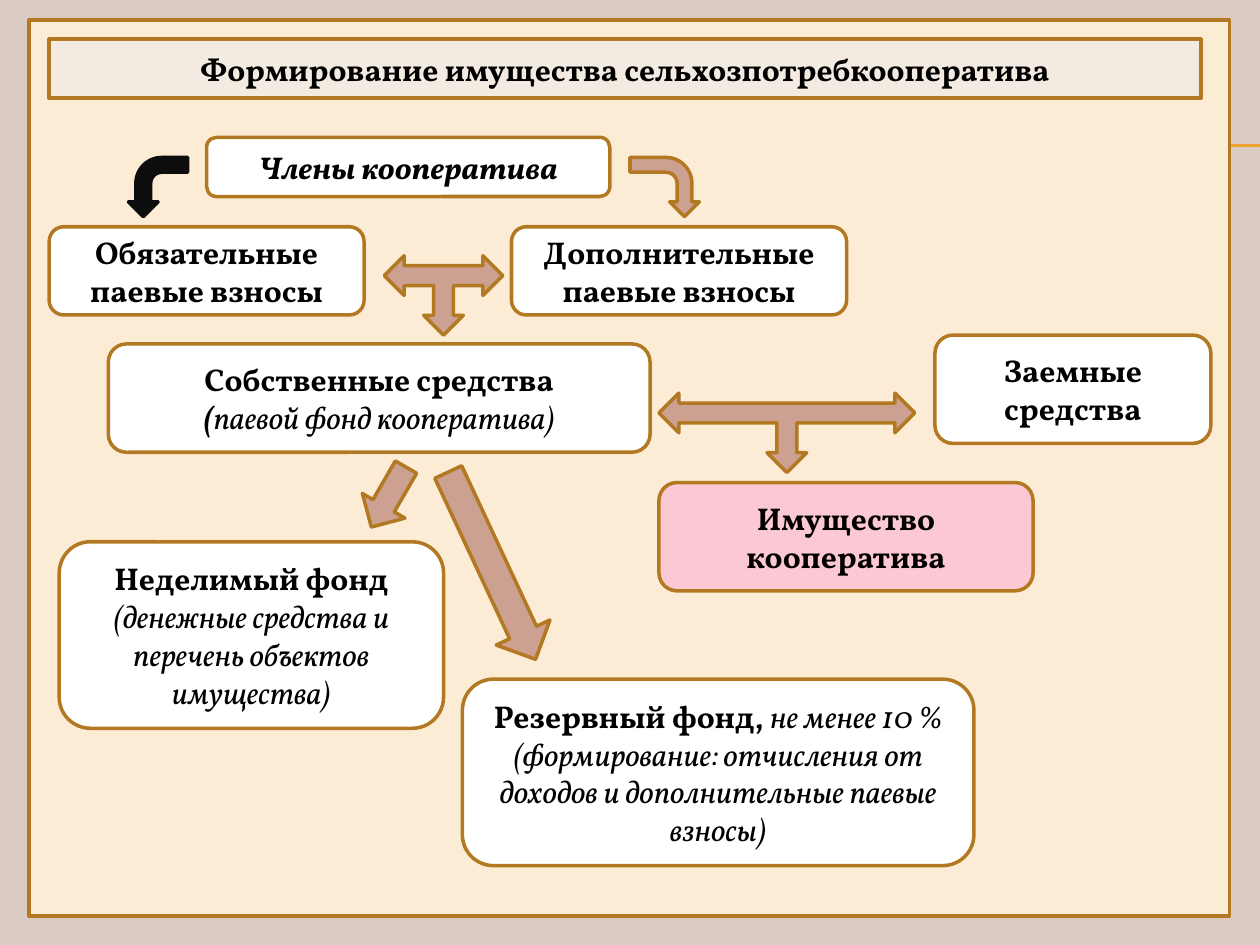
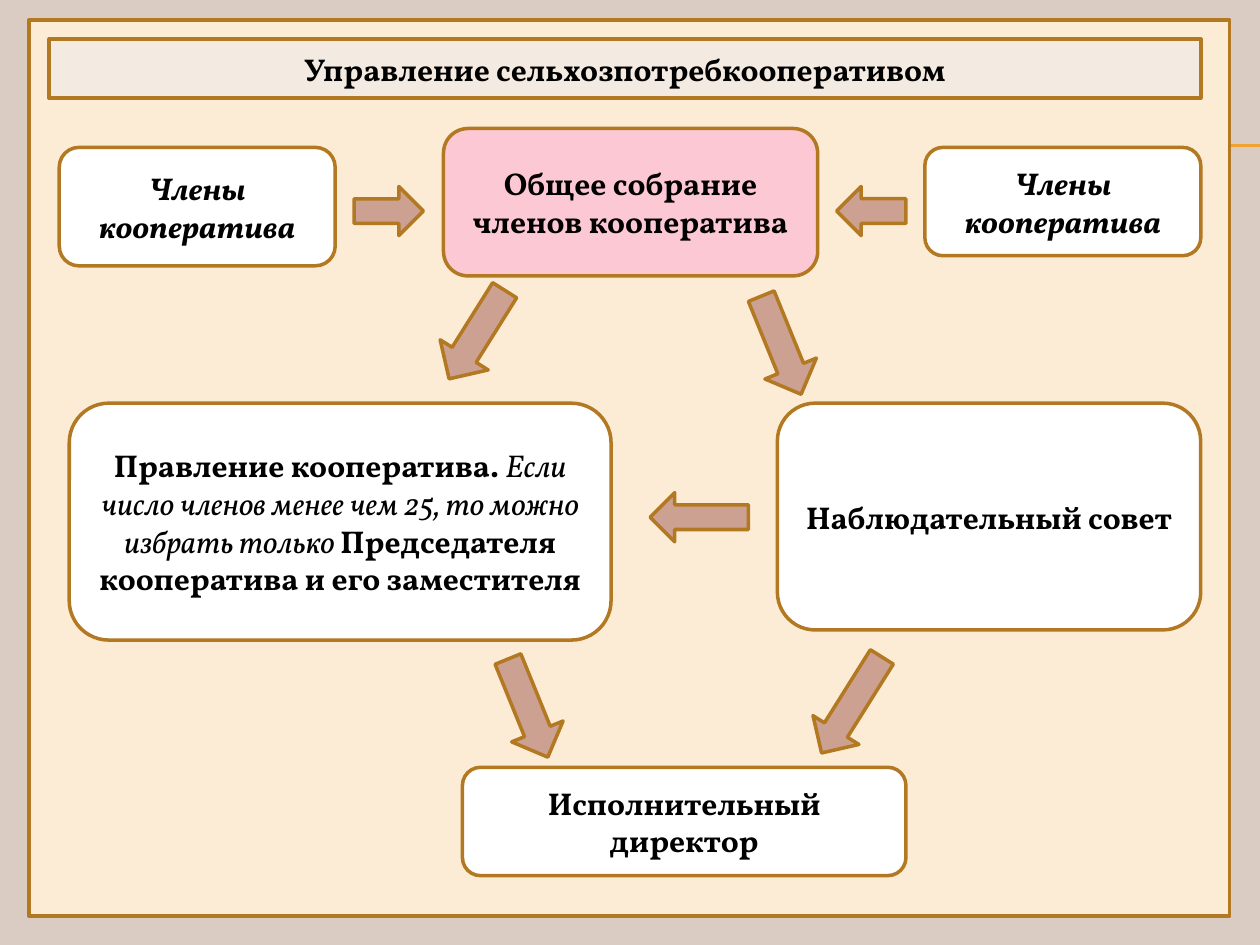
from pptx import Presentation
from pptx.dml.color import RGBColor
from pptx.enum import shapes, text
from pptx.oxml import parse_xml
from pptx.oxml.ns import nsdecls
from pptx.oxml.xmlchemy import OxmlElement
from pptx.util import Inches, Pt

SHAPE = shapes.MSO_SHAPE
FONT = "Vollkorn"
FONT_SIZE = 18
INK = "000000"
BACKDROP = "DACBC3"
PANEL = "FCECD5"
TITLE_FILL = "F3EAE2"
BORDER = "B27822"
RULE = "F0A22E"
WHITE = "FFFFFF"
PINK = "FCC8D4"
ARROW = "CCA192"
DARK = "0D0D0D"


def rgb(value):
    return RGBColor.from_string(value)


class Deck:
    """Shared style plus the slide being built."""

    def __init__(self, prs):
        self.prs = prs
        self.slide = None
        fill = prs.slide_master.background.fill
        fill.solid()
        fill.fore_color.rgb = rgb(BACKDROP)

    def new_slide(self, title):
        self.slide = self.prs.slides.add_slide(self.prs.slide_layouts[5])
        for y in (1.15, 1.16):
            self.rule(0.56, y, 10, y)
        self.shape(SHAPE.RECTANGLE, 0.23, 0.16, 9.53, 7.11, PANEL)
        self.title(title)

    def rule(self, x1, y1, x2, y2):
        line = self.slide.shapes.add_connector(
            shapes.MSO_CONNECTOR.STRAIGHT,
            Inches(x1), Inches(y1), Inches(x2), Inches(y2))
        line.line.color.rgb = rgb(RULE)
        line.line.width = Pt(0.75)
        line._element.spPr.append(OxmlElement("a:effectLst"))

    def title(self, words):
        sp = self.slide.shapes.title
        sp.left, sp.top = Inches(0.39), Inches(0.31)
        sp.width, sp.height = Inches(9.14), Inches(0.47)
        sp._element.spPr.append(parse_xml(
            f'<a:prstGeom {nsdecls("a")} prst="roundRect"><a:avLst/></a:prstGeom>'))
        self.paint(sp, TITLE_FILL)
        self.label(sp, [[(words, "b")]])
        # The title sits above the panel
        self.slide.shapes._spTree.append(sp._element)

    def paint(self, sp, fill, line=BORDER):
        sp.fill.solid()
        sp.fill.fore_color.rgb = rgb(fill)
        sp.line.color.rgb = rgb(line)
        sp.line.width = Pt(2)

    def label(self, sp, paragraphs):
        """Each paragraph is a list of (words, style), style made of b and i."""
        tf = sp.text_frame
        tf.word_wrap = True
        tf.auto_size = text.MSO_AUTO_SIZE.NONE
        tf.vertical_anchor = text.MSO_ANCHOR.MIDDLE
        for i, runs in enumerate(paragraphs):
            p = tf.add_paragraph() if i else tf.paragraphs[0]
            p.alignment = text.PP_ALIGN.CENTER
            p.font.name, p.font.size = FONT, Pt(FONT_SIZE)
            p.font.color.rgb = rgb(INK)
            for words, style in runs:
                r = p.add_run()
                r.text = words
                font = p.font if len(runs) == 1 else r.font
                font.bold, font.italic = "b" in style, "i" in style

    def shape(self, kind, x, y, w, h, fill, line=BORDER, rotation=0):
        sp = self.slide.shapes.add_shape(
            kind, Inches(x), Inches(y), Inches(w), Inches(h))
        sp.shadow.inherit = False
        sp.rotation = rotation
        self.paint(sp, fill, line)
        return sp

    def box(self, x, y, w, h, *paragraphs, fill=WHITE):
        sp = self.shape(SHAPE.ROUNDED_RECTANGLE, x, y, w, h, fill)
        self.label(sp, paragraphs)

    def arrow(self, kind, x, y, w, h, rotation=0):
        return self.shape(kind, x, y, w, h, ARROW, rotation=rotation)


def property_slide(deck):
    deck.new_slide("Формирование имущества сельхозпотребкооператива")

    # Members, contributions and funds
    deck.box(5.23, 3.83, 2.97, 0.86, [("Имущество кооператива", "b")], fill=PINK)
    deck.box(0.86, 2.73, 4.3, 0.86,
             [("Собственные средства", "b")],
             [("(", "bi"), ("паевой фонд кооператива)", "i")])
    deck.box(7.42, 2.66, 2.19, 0.86, [("Заемные средства", "b")])
    deck.box(0.39, 1.8, 2.5, 0.7, [("Обязательные паевые взносы", "b")])
    deck.box(4.06, 1.8, 2.66, 0.7, [("Дополнительные паевые взносы", "b")])
    deck.box(1.64, 1.09, 3.2, 0.47, [("Члены кооператива", "bi")])
    deck.box(0.47, 4.3, 3.05, 1.48,
             [("Неделимый фонд ", "b"),
              ("(денежные средства и перечень объектов имущества)", "i")])
    deck.box(3.67, 5.39, 4.06, 1.48,
             [("Резервный фонд, ", "b"),
              ("не менее 10 % (формирование: отчисления от доходов "
               "и дополнительные паевые взносы)", "i")])

    # Bent arrows from the members; the dark one is mirrored
    dark = deck.shape(SHAPE.BENT_ARROW, 1.02, 1.25, 0.47, 0.47, DARK, DARK, 90)
    dark._element.spPr.xfrm.set("flipV", "1")
    deck.arrow(SHAPE.BENT_ARROW, 5.04, 1.21, 0.47, 0.55, 90)

    # Pairs that join into one fund
    for x, y, w in ((3.05, 2.03, 0.94), (5.23, 3.12, 2.03)):
        deck.arrow(SHAPE.LEFT_RIGHT_UP_ARROW, x, y, w, 0.63, 180)

    # Split of own funds
    deck.arrow(SHAPE.DOWN_ARROW, 2.89, 3.67, 0.39, 0.55, 30)
    deck.arrow(SHAPE.DOWN_ARROW, 3.67, 3.67, 0.47, 1.64, 335)


def management_slide(deck):
    deck.new_slide("Управление сельхозпотребкооперативом")

    # Governing bodies
    deck.box(3.52, 1.02, 2.97, 1.17,
             [("Общее собрание членов кооператива", "b")], fill=PINK)
    deck.box(6.17, 3.2, 3.36, 1.8, [("Наблюдательный совет", "b")])
    deck.box(3.67, 6.09, 3.52, 0.86, [("Исполнительный директор", "b")])
    deck.box(0.55, 3.2, 4.3, 1.88,
             [("Правление кооператива. ", "b"),
              ("Если число членов менее чем 25, то можно избрать только ", "i"),
              ("Председателя кооператива и его заместителя", "b")])
    for x, h in ((7.34, 0.86), (0.47, 0.94)):
        deck.box(x, 1.17, 2.19, h, [("Члены кооператива", "bi")])

    # Arrows between the bodies
    down_left, down_right = 302.1, 247.9
    for x, y, w, h, rotation in (
            (6.64, 1.48, 0.55, 0.39, 0),
            (2.81, 1.48, 0.55, 0.39, 180),
            (3.37, 2.43, 0.83, 0.45, down_left),
            (5.78, 2.52, 0.84, 0.44, down_right),
            (5.16, 3.91, 0.78, 0.39, 0),
            (6.31, 5.38, 0.9, 0.43, down_left),
            (3.77, 5.4, 0.84, 0.44, down_right)):
        deck.arrow(SHAPE.LEFT_ARROW, x, y, w, h, rotation)


def main():
    prs = Presentation()
    prs.slide_width, prs.slide_height = Inches(10), Inches(7.5)
    deck = Deck(prs)
    property_slide(deck)
    management_slide(deck)
    prs.save("out.pptx")


if __name__ == "__main__":
    main()
